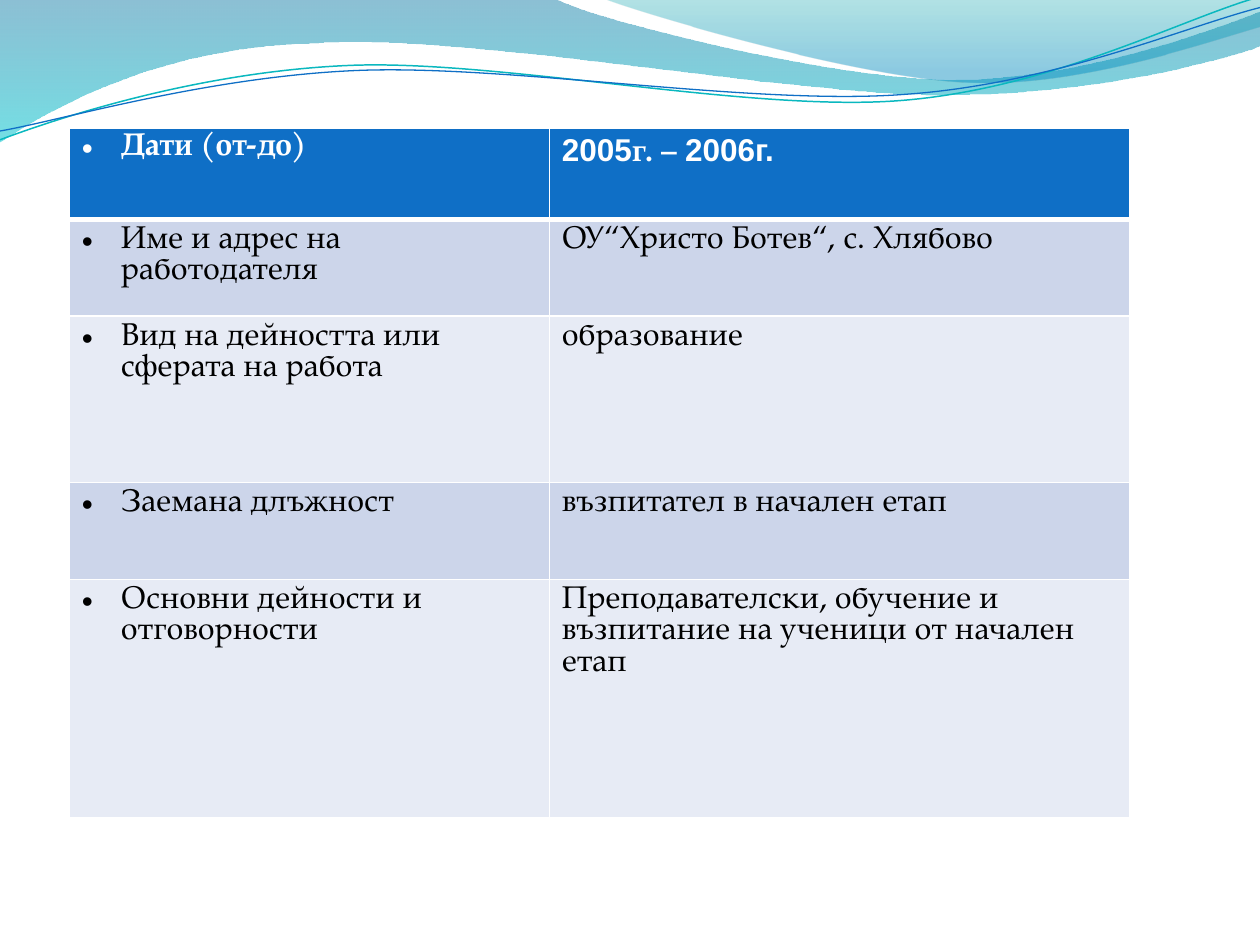
from lxml.etree import SubElement
from pptx import Presentation
from pptx.dml.color import RGBColor
from pptx.oxml.ns import qn
from pptx.util import Inches, Pt

WHITE = RGBColor(0xFF, 0xFF, 0xFF)
BLACK = RGBColor(0x00, 0x00, 0x00)
BLUE = RGBColor(0x0F, 0x6F, 0xC6)
TURQUOISE = RGBColor(0x0A, 0xB8, 0xBF)
DEEP_BLUE = RGBColor(0x00, 0x74, 0xA1)
CYAN = RGBColor(0x00, 0xC6, 0xCF)
TEAL = RGBColor(0x00, 0xA1, 0xA9)
SKY = RGBColor(0x00, 0x8B, 0xBF)
DARK_BAND = RGBColor(0xCC, 0xD5, 0xEA)
LIGHT_BAND = RGBColor(0xE7, 0xEB, 0xF5)

SERIF = "TeX Gyre Pagella"
SANS = "Arial"

LEFT_WAVE = [
    (0, 0), (4.4, -0.01), (4.76, 0.17, 6.64, 0.63, 7.58, 0.63),
    (8.53, 0.63, 9.58, 0.26, 10, 0.09), (10.01, 0.36),
    (9.83, 0.44, 8.7, 0.76, 7.46, 0.75), (6.22, 0.75, 3.82, 0.28, 2.57, 0.34),
    (1.29, 0.36, 0.46, 0.83, -0.01, 1.13), (0, 0),
]
RIGHT_WAVE = [
    (4.79, -0.01), (5.09, 0.11, 6.82, 0.62, 7.69, 0.65),
    (8.56, 0.69, 9.61, 0.32, 10, 0.21), (10, 0), (4.79, -0.01),
]
TURQUOISE_LINE = [
    (0, 1.11), (0.48, 0.93, 1.58, 0.57, 2.77, 0.52),
    (3.95, 0.47, 5.93, 0.89, 7.13, 0.8), (8.33, 0.71, 9.38, 0.15, 9.98, -0.02),
]
BLUE_LINE = [
    (0, 1.04), (0.47, 0.96, 1.64, 0.61, 2.83, 0.56),
    (4.03, 0.51, 5.97, 0.84, 7.17, 0.75), (8.36, 0.67, 9.41, 0.21, 10, 0.06),
]

COLUMN_WIDTHS = [3.81, 4.61]
ROW_HEIGHTS = [0.72, 0.77, 1.32, 0.77, 1.89]
HEADER_TOP_MARGINS = [0.03, 0.08]
ROWS = [
    ([("Дати (от-до)", SERIF)],
     [("2005", SANS), ("г. – ", SERIF), ("2006г.", SANS)]),
    ([("Име и адрес на работодателя", SERIF)],
     [("ОУ“Христо Ботев“, с. Хлябово", SERIF)]),
    ([("Вид на дейността или сферата на работа", SERIF)],
     [("образование", SERIF)]),
    ([("Заемана длъжност", SERIF)],
     [("възпитател в начален етап", SERIF)]),
    ([("Основни дейности и отговорности", SERIF)],
     [("Преподавателски, обучение и възпитание на ученици от начален етап", SERIF)]),
]


def bend_curves(shape, segments):
    """Join the three points of each six-number segment into a Bezier curve."""
    nodes = iter(list(shape.element.spPr.iter(qn("a:lnTo"))))
    for segment in segments[1:]:
        node = next(nodes)
        if len(segment) == 6:
            node.tag = qn("a:cubicBezTo")
            for extra in (next(nodes), next(nodes)):
                node.append(extra[0])
                extra.getparent().remove(extra)


def add_outline(page, segments, close):
    """Add a freeform that follows straight and curved segments."""
    points = [(Inches(segment[i]), Inches(segment[i + 1]))
              for segment in segments for i in range(0, len(segment), 2)]
    builder = page.shapes.build_freeform(*points[0])
    builder.add_line_segments(points[1:], close=close)
    shape = builder.convert_to_shape()
    shape.shadow.inherit = False
    bend_curves(shape, segments)
    return shape


def add_wave(page, segments, stops):
    """Add a closed wave with a translucent vertical gradient."""
    wave = add_outline(page, segments, True)
    wave.line.fill.background()
    wave.fill.gradient()
    wave.fill.gradient_angle = 270
    for stop, (position, color, opacity) in zip(wave.fill.gradient_stops, stops):
        stop.position = position
        stop.color.rgb = color
    colors = wave.element.spPr.iter(qn("a:srgbClr"))
    for node, (position, color, opacity) in zip(list(colors), stops):
        SubElement(node, qn("a:alpha"), val=str(opacity * 1000))


def add_wave_line(page, segments, color, width):
    """Add an open curved line."""
    curve = add_outline(page, segments, False)
    curve.fill.background()
    curve.line.color.rgb = color
    curve.line.width = Pt(width)


def set_borders(cell, top, bottom):
    """Draw white cell borders, with the top and bottom widths in points."""
    properties = cell._tc.get_or_add_tcPr()
    for tag, width in (("a:lnL", 1), ("a:lnR", 1), ("a:lnT", top), ("a:lnB", bottom)):
        border = SubElement(properties, qn(tag), w=str(Pt(width)))
        fill = SubElement(border, qn("a:solidFill"))
        SubElement(fill, qn("a:srgbClr"), val=str(WHITE))


def set_bullet(para):
    """Give the paragraph a round bullet and a hanging indent."""
    properties = para._p.get_or_add_pPr()
    properties.set("marL", str(Inches(0.31)))
    properties.set("indent", str(-Inches(0.31)))
    SubElement(properties, qn("a:buFont"), typeface=SANS)
    SubElement(properties, qn("a:buChar"), char="•")


def fill_cell(cell, spans, row, column):
    """Style one table cell and write its runs."""
    header = row == 0
    set_borders(cell, 3 if row == 1 else 1, 3 if header else 1)
    cell.fill.solid()
    cell.fill.fore_color.rgb = BLUE if header else DARK_BAND if row % 2 else LIGHT_BAND
    if header:
        cell.margin_top = Inches(HEADER_TOP_MARGINS[column])
    para = cell.text_frame.paragraphs[0]
    para.line_spacing = Pt(18)
    if column == 0:
        set_bullet(para)
    for text, font in spans:
        span = para.add_run()
        span.text = text
        span.font.name = font
        span.font.size = Pt(18)
        span.font.bold = header
        span.font.color.rgb = WHITE if header else BLACK


def add_job_table(page):
    """Add the table that describes the job."""
    table = page.shapes.add_table(
        len(ROWS), len(COLUMN_WIDTHS), Inches(0.55), Inches(1.02),
        Inches(sum(COLUMN_WIDTHS)), Inches(sum(ROW_HEIGHTS))).table
    for column, width in zip(table.columns, COLUMN_WIDTHS):
        column.width = Inches(width)
    for row, (height, cells) in enumerate(zip(ROW_HEIGHTS, ROWS)):
        table.rows[row].height = Inches(height)
        for column, spans in enumerate(cells):
            fill_cell(table.cell(row, column), spans, row, column)


def main():
    """Build the slide and save the deck."""
    deck = Presentation()
    deck.slide_width, deck.slide_height = Inches(10), Inches(7.5)
    page = deck.slides.add_slide(deck.slide_layouts[6])
    add_wave(page, LEFT_WAVE, [(0, DEEP_BLUE, 45), (1, CYAN, 55)])
    add_wave(page, RIGHT_WAVE, [(0, TEAL, 30), (0.8, SKY, 45)])
    add_wave_line(page, TURQUOISE_LINE, TURQUOISE, 0.85)
    add_wave_line(page, BLUE_LINE, BLUE, 0.75)
    add_job_table(page)
    deck.save("out.pptx")


if __name__ == "__main__":
    main()
